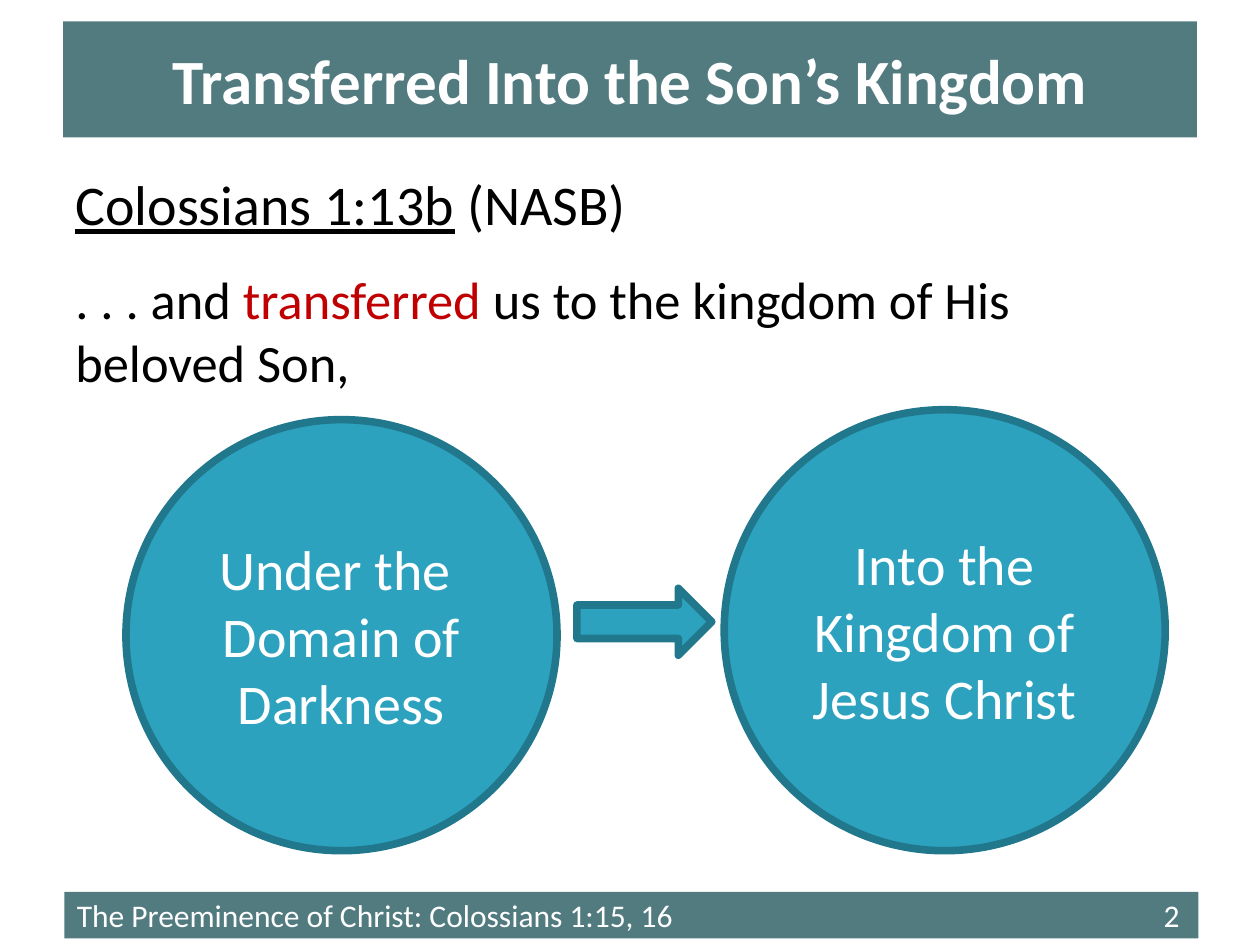
from pptx import Presentation
from pptx.dml.color import RGBColor
from pptx.enum.shapes import MSO_SHAPE as Form
from pptx.enum.text import MSO_ANCHOR as Anchor, PP_ALIGN as Align
from pptx.oxml.ns import qn
from pptx.util import Cm, Pt
from lxml.etree import SubElement

SLATE = RGBColor(0x52, 0x7B, 0x80)
TEAL = RGBColor(0x2D, 0xA2, 0xBF)
EDGE = RGBColor(0x21, 0x78, 0x8D)
RED = RGBColor(0xC0, 0x00, 0x00)
WHITE = RGBColor(0xFF, 0xFF, 0xFF)
BLACK = RGBColor(0x00, 0x00, 0x00)


class Deck:
    """Holds the style and the current slide."""
    font = "Calibri"
    edge = Pt(4.33)

    def __init__(self, slide):
        self.slide = slide

    def words(self, para, text, size, color, bold=False, under=False):
        run = para.add_run()
        run.text = text
        font = run.font
        font.name, font.size, font.bold = self.font, Pt(size), bold
        font.underline = under
        font.color.rgb = color

    def title(self, text, *box):
        head = self.slide.shapes.title
        head.left, head.top, head.width, head.height = map(Cm, box)
        head.fill.solid()
        head.fill.fore_color.rgb = SLATE
        head.text_frame.vertical_anchor = Anchor.MIDDLE
        para = head.text_frame.paragraphs[0]
        para.alignment = Align.CENTER
        self.words(para, text, 36, WHITE, bold=True)

    def shape(self, form, fill, *box, edge=None):
        item = self.slide.shapes.add_shape(form, *map(Cm, box))
        item.shadow.inherit = False
        item.fill.solid()
        item.fill.fore_color.rgb = fill
        if edge is None:
            item.line.fill.background()
        else:
            item.line.color.rgb = edge
            item.line.width = self.edge
        item.text_frame.vertical_anchor = Anchor.MIDDLE
        return item

    def circle(self, lines, left, top, side):
        disc = self.shape(Form.OVAL, TEAL, left, top, side, side, edge=EDGE)
        para = disc.text_frame.paragraphs[0]
        para.alignment = Align.CENTER
        for i, line in enumerate(lines):
            if i:
                para.add_line_break()
            self.words(para, line, 32, WHITE)

    def arrow(self, *box):
        self.shape(Form.RIGHT_ARROW, TEAL, *box, edge=EDGE)

    def verse(self, parts, *box, gap):
        frame = self.slide.shapes.add_textbox(*map(Cm, box)).text_frame
        frame.word_wrap = True
        for i, runs in enumerate(parts):
            para = frame.add_paragraph() if i else frame.paragraphs[0]
            if i:
                para.space_before = Pt(gap)
            for text, size, color, under in runs:
                self.words(para, text, size, color, under=under)

    def footer(self, text, page, stop, *box):
        bar = self.shape(Form.RECTANGLE, SLATE, *box)
        para = bar.text_frame.paragraphs[0]
        para.alignment = Align.LEFT
        # Right tab stop for the page number
        tabs = SubElement(para._p.get_or_add_pPr(), qn("a:tabLst"))
        SubElement(tabs, qn("a:tab"), pos=str(int(Cm(stop))), algn="r")
        self.words(para, f"{text}\t{page}", 18, WHITE)


def main():
    show = Presentation()
    show.slide_width, show.slide_height = Cm(25.4), Cm(19.05)
    deck = Deck(show.slides.add_slide(show.slide_layouts[5]))

    # Bars at the top and bottom
    deck.footer("The Preeminence of Christ: Colossians 1:15, 16", 2, 22.23,
                1.3, 17.98, 22.86, 0.94)
    deck.title("Transferred Into the Son’s Kingdom", 1.27, 0.43, 22.86, 2.34)

    # Bible verse
    deck.verse([
        [("Colossians 1:13b", 32, BLACK, True),
         (" (NASB)", 32, BLACK, False)],
        [(". . . and ", 30, BLACK, False),
         ("transferred", 30, RED, False),
         (" us to the kingdom of His beloved Son,", 30, BLACK, False)],
    ], 1.27, 3.3, 21.8, 5.38, gap=17)

    # From one realm to the next
    deck.circle(["Under the ", "Domain of Darkness"], 2.54, 8.46, 8.69)
    deck.circle(["Into the Kingdom of Jesus Christ"], 14.6, 8.26, 8.89)
    deck.arrow(11.63, 11.86, 2.72, 1.35)

    show.save("out.pptx")


if __name__ == "__main__":
    main()
